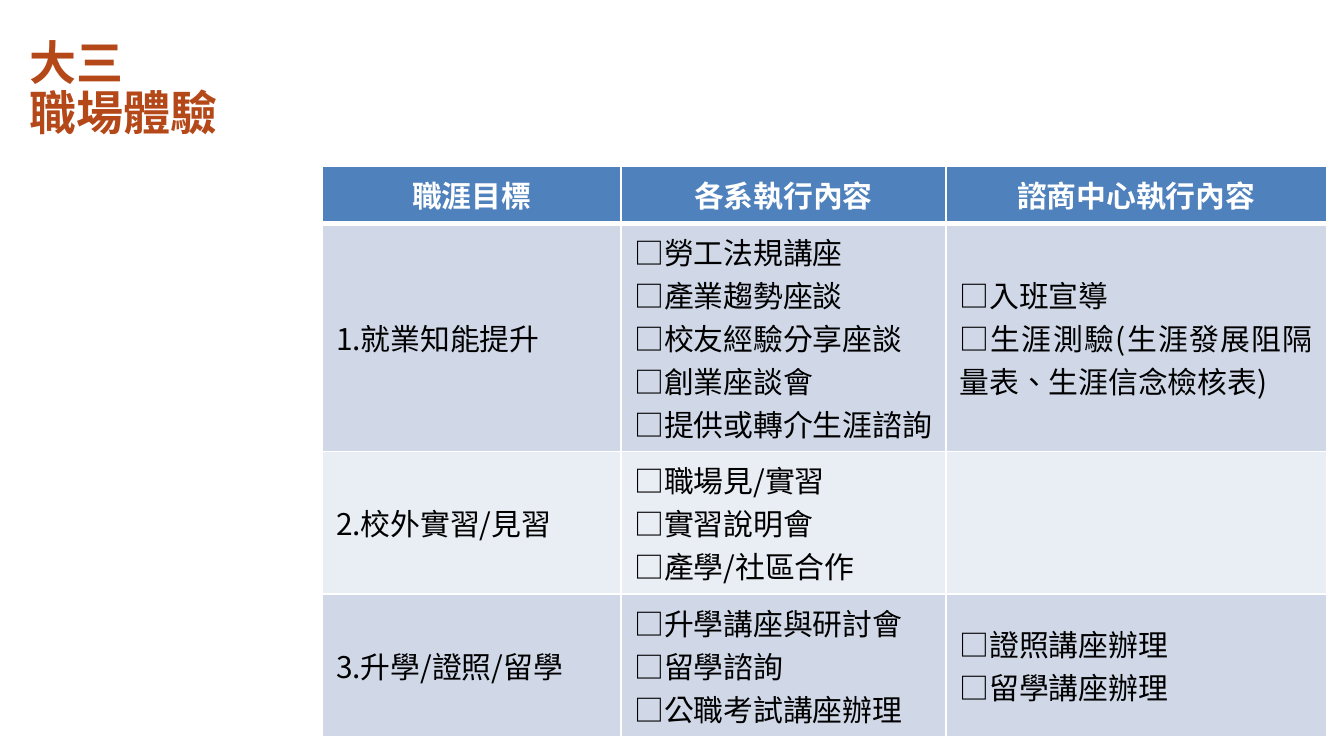
from dataclasses import dataclass

from lxml import etree
from pptx import Presentation
from pptx.dml.color import RGBColor
from pptx.enum.text import MSO_ANCHOR, PP_ALIGN
from pptx.oxml.ns import qn
from pptx.util import Inches, Pt

MIDDLE, BOTTOM = MSO_ANCHOR.MIDDLE, MSO_ANCHOR.BOTTOM
LEFT, CENTER, JUSTIFY = PP_ALIGN.LEFT, PP_ALIGN.CENTER, PP_ALIGN.JUSTIFY

FONT, LANGUAGE = "Noto Sans CJK SC", "zh-TW"
WHITE, BLACK, RUST = "FFFFFF", "000000", "B44818"
HEADER_BLUE = "4F81BD"
BAND_FILLS = ("D0D8E8", "E9EDF4")
LINE_HEIGHT, CELL_PADDING = 0.32, 0.1
COLUMN_WIDTHS = (2.22, 2.42, 2.83)


@dataclass(frozen=True)
class TextStyle:
    size: float
    color: str
    bold: bool
    alignment: PP_ALIGN


TITLE_STYLE = TextStyle(25.2, RUST, True, LEFT)
HEADER_STYLE = TextStyle(16, WHITE, True, CENTER)
BODY_STYLE = TextStyle(16, BLACK, False, JUSTIFY)

HEADERS = ("職涯目標", "各系執行內容", "諮商中心執行內容")


@dataclass(frozen=True)
class CareerGoal:
    name: str
    department_tasks: tuple[str, ...]
    counseling_tasks: tuple[str, ...] = ()

    def cells(self) -> list[list[str]]:
        tasks = (self.department_tasks, self.counseling_tasks)
        return [[self.name]] + [[f"□{task}" for task in group] for group in tasks]


GOALS = (
    CareerGoal(
        "1.就業知能提升",
        ("勞工法規講座", "產業趨勢座談", "校友經驗分享座談", "創業座談會", "提供或轉介生涯諮詢"),
        ("入班宣導", "生涯測驗(生涯發展阻隔量表、生涯信念檢核表)"),
    ),
    CareerGoal("2.校外實習/見習", ("職場見/實習", "實習說明會", "產學/社區合作")),
    CareerGoal(
        "3.升學/證照/留學",
        ("升學講座與研討會", "留學諮詢", "公職考試講座辦理"),
        ("證照講座辦理", "留學講座辦理"),
    ),
)


def rgb(color: str) -> RGBColor:
    return RGBColor.from_string(color)


def style_paragraph(paragraph, style: TextStyle) -> None:
    paragraph.alignment = style.alignment
    font = paragraph.font
    font.name, font.size, font.bold = FONT, Pt(style.size), style.bold
    font.color.rgb = rgb(style.color)
    properties = paragraph._p.pPr.find(qn("a:defRPr"))
    etree.SubElement(properties, qn("a:ea"), typeface=FONT)
    for run in paragraph.runs:
        run._r.get_or_add_rPr().set("lang", LANGUAGE)


def write_lines(text_frame, lines, style: TextStyle) -> None:
    for index, line in enumerate(lines):
        paragraph = text_frame.paragraphs[0] if index == 0 else text_frame.add_paragraph()
        paragraph.text = line
        style_paragraph(paragraph, style)


def set_borders(cell, bottom_width: float) -> None:
    """Draw white cell borders; they must precede the fill in the XML."""
    properties = cell._tc.get_or_add_tcPr()
    widths = {"a:lnL": 1, "a:lnR": 1, "a:lnT": 1, "a:lnB": bottom_width}
    for tag, width in widths.items():
        line = etree.SubElement(properties, qn(tag), w=str(Pt(width)))
        fill = etree.SubElement(line, qn("a:solidFill"))
        etree.SubElement(fill, qn("a:srgbClr"), val=WHITE)


def draw_cell(cell, lines, style: TextStyle, fill: str, bottom_width: float = 1) -> None:
    set_borders(cell, bottom_width)
    cell.fill.solid()
    cell.fill.fore_color.rgb = rgb(fill)
    cell.vertical_anchor = MIDDLE
    write_lines(cell.text_frame, lines, style)


def draw_title(slide) -> None:
    box = slide.shapes.add_textbox(Inches(0.12), Inches(0.37), Inches(7.02), Inches(0.94))
    frame = box.text_frame
    frame.word_wrap = True
    frame.vertical_anchor = BOTTOM
    frame.margin_top, frame.margin_bottom = 0, Inches(0.26)
    write_lines(frame, ["大三\v職場體驗"], TITLE_STYLE)
    frame.paragraphs[0].line_spacing = 0.9


def draw_goal_table(slide) -> None:
    line_counts = [1] + [len(goal.department_tasks) for goal in GOALS]
    heights = [count * LINE_HEIGHT + CELL_PADDING for count in line_counts]
    table = slide.shapes.add_table(
        len(heights), len(COLUMN_WIDTHS), Inches(2.4), Inches(1.24),
        Inches(sum(COLUMN_WIDTHS)), Inches(sum(heights)),
    ).table
    for column, width in zip(table.columns, COLUMN_WIDTHS):
        column.width = Inches(width)
    for row, height in zip(table.rows, heights):
        row.height = Inches(height)
    for cell, header in zip(table.rows[0].cells, HEADERS):
        draw_cell(cell, [header], HEADER_STYLE, HEADER_BLUE, bottom_width=3)
    for index, goal in enumerate(GOALS):
        fill = BAND_FILLS[index % 2]
        for cell, lines in zip(table.rows[index + 1].cells, goal.cells()):
            draw_cell(cell, lines, BODY_STYLE, fill)


def main() -> None:
    presentation = Presentation()
    presentation.slide_width = Inches(10)
    presentation.slide_height = presentation.slide_width * 9 // 16
    slide = presentation.slides.add_slide(presentation.slide_layouts[6])
    draw_title(slide)
    draw_goal_table(slide)
    presentation.save("out.pptx")


if __name__ == "__main__":
    main()
